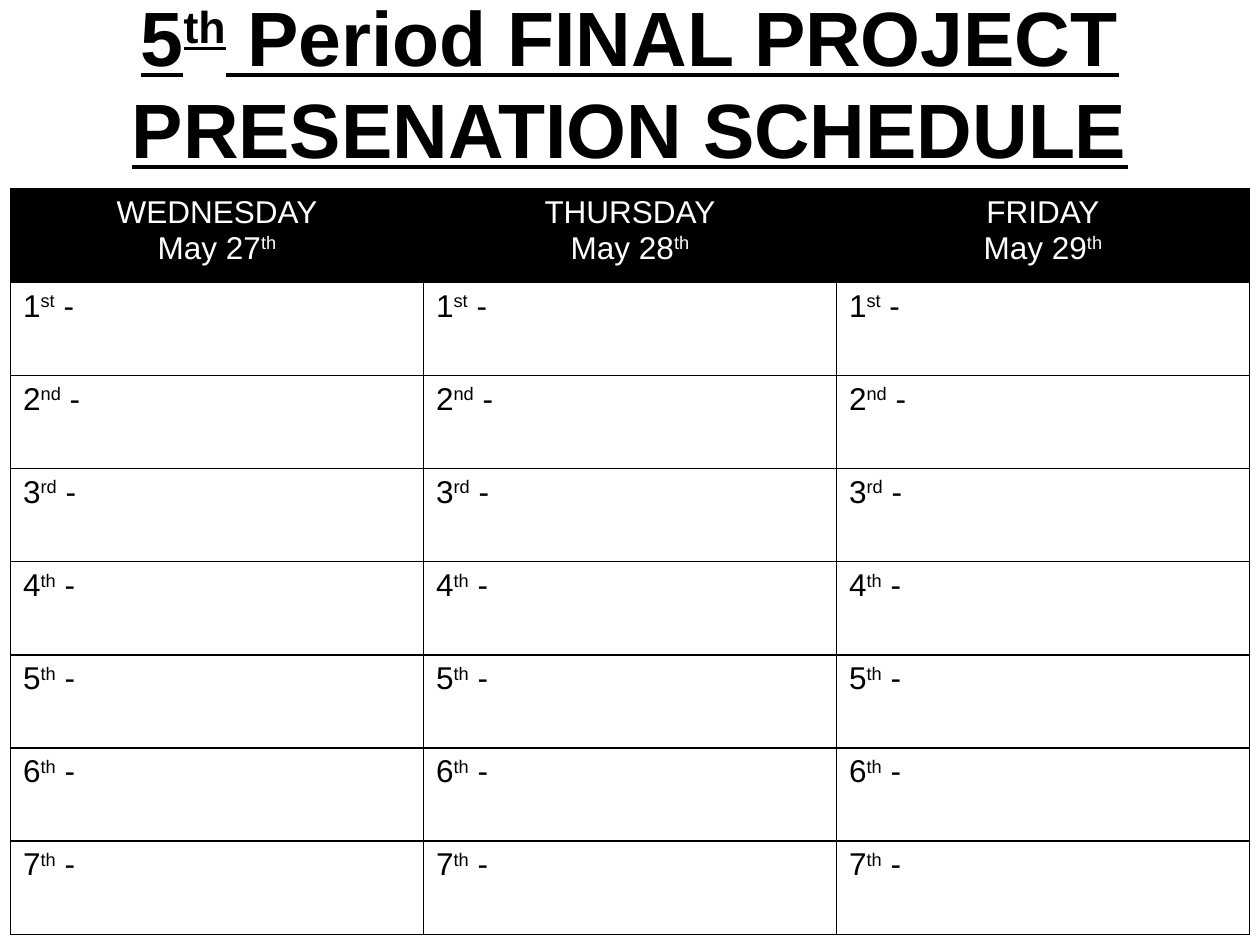
from dataclasses import dataclass

from lxml import etree
from pptx import Presentation
from pptx.dml.color import RGBColor
from pptx.enum.text import MSO_ANCHOR, MSO_AUTO_SIZE, PP_ALIGN
from pptx.oxml.ns import qn
from pptx.table import _Cell
from pptx.text.text import TextFrame
from pptx.util import Pt

CENTER, LEFT = PP_ALIGN.CENTER, PP_ALIGN.LEFT
MIDDLE = MSO_ANCHOR.MIDDLE
NO_AUTOFIT = MSO_AUTO_SIZE.NONE
TITLE_ONLY_LAYOUT = 5

FONT = "Arial"
BLACK, WHITE = "000000", "FFFFFF"
BORDER_SIDES = ("a:lnL", "a:lnR", "a:lnT", "a:lnB")
COLUMN_WIDTH, ROW_HEIGHT = 236, 53.25


@dataclass(frozen=True)
class Piece:
    text: str
    raised: bool = False


@dataclass(frozen=True)
class TextStyle:
    size: float
    color: str
    align: PP_ALIGN
    heading: bool = False


Line = list[Piece]

TITLE_STYLE = TextStyle(44, BLACK, CENTER, heading=True)
DAY_STYLE = TextStyle(18, WHITE, CENTER)
SLOT_STYLE = TextStyle(18, BLACK, LEFT)


def rgb(hex_color: str) -> RGBColor:
    return RGBColor.from_string(hex_color)


def ordinal(number: str, suffix: str, rest: str = "") -> Line:
    """A number with a raised suffix and any text that follows it."""
    line = [Piece(number), Piece(suffix, raised=True)]
    return line + [Piece(rest)] if rest else line


def write_lines(frame: TextFrame, lines: list[Line], style: TextStyle) -> None:
    for index, line in enumerate(lines):
        paragraph = frame.paragraphs[0] if index == 0 else frame.add_paragraph()
        paragraph.alignment = style.align
        paragraph.space_before = Pt(0)
        for piece in line:
            run = paragraph.add_run()
            run.text = piece.text
            run.font.name = FONT
            run.font.size = Pt(style.size)
            run.font.color.rgb = rgb(style.color)
            run.font.bold = style.heading
            run.font.underline = style.heading
            if piece.raised:
                run._r.get_or_add_rPr().set("baseline", "30000")


def draw_borders(cell: _Cell) -> None:
    properties = cell._tc.get_or_add_tcPr()
    for side in BORDER_SIDES:
        border = etree.SubElement(properties, qn(side), w=str(Pt(1)))
        fill = etree.SubElement(border, qn("a:solidFill"))
        etree.SubElement(fill, qn("a:srgbClr"), val=BLACK)


def fill_cell(cell: _Cell, lines: list[Line], style: TextStyle, fill: str) -> None:
    draw_borders(cell)
    cell.fill.solid()
    cell.fill.fore_color.rgb = rgb(fill)
    write_lines(cell.text_frame, lines, style)


def main() -> None:
    presentation = Presentation()
    presentation.slide_width, presentation.slide_height = Pt(720), Pt(540)
    slide = presentation.slides.add_slide(
        presentation.slide_layouts[TITLE_ONLY_LAYOUT])

    # Title
    title = slide.shapes.title
    title.left, title.top = Pt(0), Pt(21.6)
    title.width, title.height = Pt(720), Pt(50.4)
    title.text_frame.auto_size = NO_AUTOFIT
    title.text_frame.vertical_anchor = MIDDLE
    title_lines = [ordinal("5", "th", " Period FINAL PROJECT"),
                   [Piece("PRESENATION SCHEDULE")]]
    write_lines(title.text_frame, title_lines, TITLE_STYLE)

    # Schedule grid: one column per day, one row per presentation slot
    days = [("WEDNESDAY", "27"), ("THURSDAY", "28"), ("FRIDAY", "29")]
    slot_suffixes = ["st", "nd", "rd", "th", "th", "th", "th"]
    row_count = len(slot_suffixes) + 1
    schedule = slide.shapes.add_table(
        row_count, len(days), Pt(6), Pt(108),
        Pt(COLUMN_WIDTH * len(days)), Pt(ROW_HEIGHT * row_count)).table
    for column in schedule.columns:
        column.width = Pt(COLUMN_WIDTH)
    for row in schedule.rows:
        row.height = Pt(ROW_HEIGHT)

    # Day headers and the numbered slots below them
    for column, (weekday, date) in enumerate(days):
        header = [[Piece(weekday)], ordinal(f"May {date}", "th")]
        fill_cell(schedule.cell(0, column), header, DAY_STYLE, BLACK)
        for slot, suffix in enumerate(slot_suffixes, start=1):
            fill_cell(schedule.cell(slot, column),
                      [ordinal(str(slot), suffix, " -")], SLOT_STYLE, WHITE)

    presentation.save("out.pptx")


if __name__ == "__main__":
    main()
